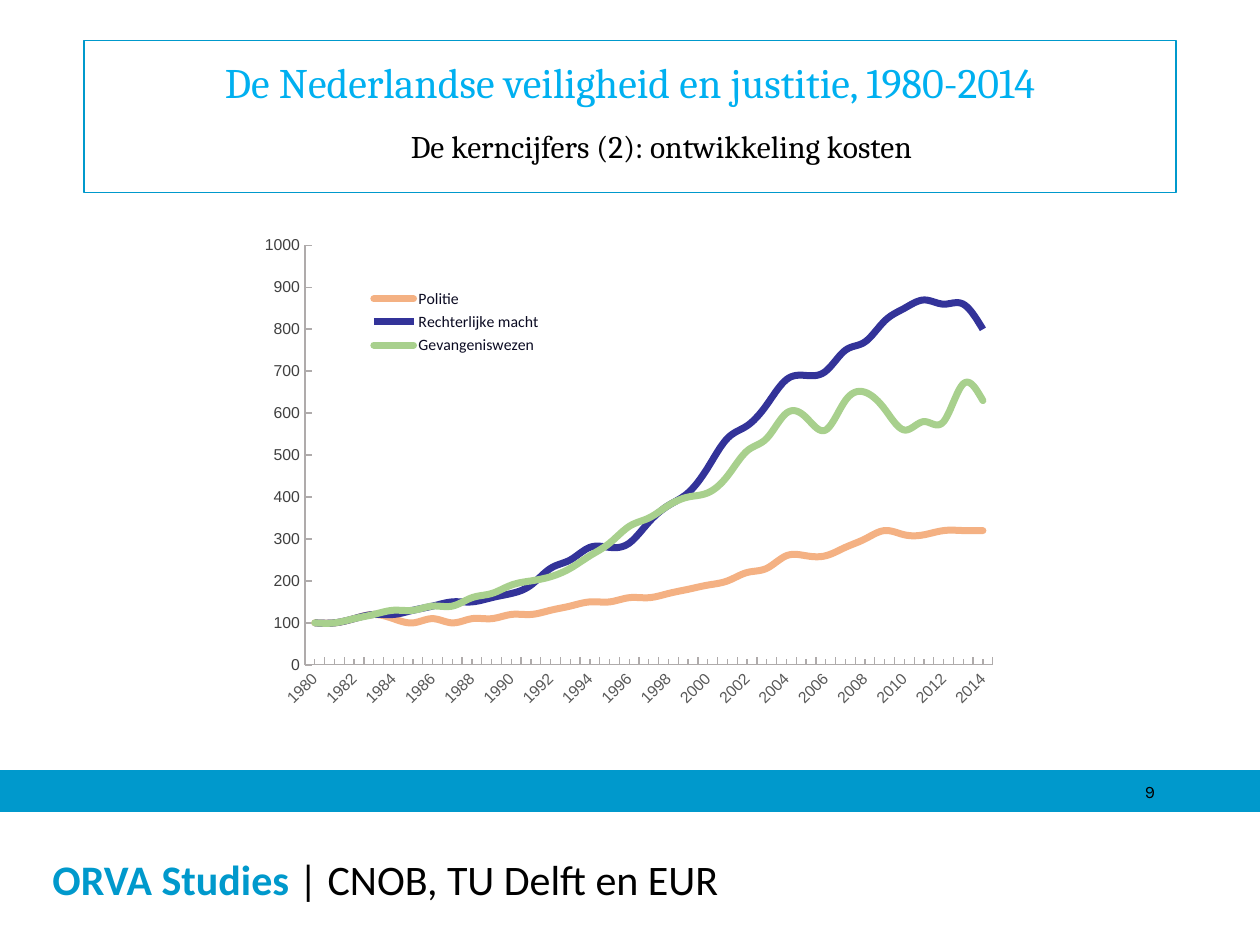
from dataclasses import dataclass

from lxml import etree
from pptx import Presentation
from pptx.chart.data import CategoryChartData
from pptx.dml.color import RGBColor
from pptx.enum import chart as ch, shapes, text
from pptx.oxml import parse_xml
from pptx.oxml.ns import nsdecls, qn
from pptx.util import Pt


@dataclass(frozen=True)
class Theme:
    blue: str = "0099CC"
    sky: str = "00B0F0"
    black: str = "000000"
    white: str = "FFFFFF"
    axis: str = "AFABAB"
    years: str = "595959"
    values: str = "404040"
    legend: str = "0B0B22"
    heading: str = "Cambria"
    body: str = "Calibri"
    number: str = "Karla"
    labels: str = "Arial"
    title_size: float = 24
    subtitle_size: float = 18
    base_size: float = 10
    label_size: float = 9


@dataclass(frozen=True)
class Box:
    left: float
    top: float
    width: float
    height: float

    def lengths(self) -> tuple:
        return Pt(self.left), Pt(self.top), Pt(self.width), Pt(self.height)


@dataclass(frozen=True)
class Band:
    box: Box
    color: str
    outlined: bool = True


@dataclass(frozen=True)
class Trend:
    name: str
    color: str
    values: tuple
    rounded: bool = True


THEME = Theme()
BANDS = (
    Band(Box(0, 458, 720, 22), THEME.blue),
    Band(Box(0, 464, 720, 76), THEME.white, False),
    Band(Box(0, 440.64, 720, 22.5), THEME.blue),
)
TRENDS = (
    Trend("Politie", "F4B183", (
        100, 100, 110, 120, 110, 100, 110, 100, 110, 110, 120, 120, 130, 140, 150, 150, 160, 160,
        170, 180, 190, 200, 220, 230, 260, 260, 260, 280, 300, 320, 310, 310, 320, 320, 320)),
    Trend("Rechterlijke macht", "333399", (
        100, 100, 110, 120, 120, 130, 140, 150, 150, 160, 170, 190, 230, 250, 280, 280, 290, 340,
        380, 410, 470, 540, 570, 620, 680, 690, 700, 750, 770, 820, 850, 870, 860, 860, 800), False),
    Trend("Gevangeniswezen", "A8D08D", (
        100, 100, 110, 120, 130, 130, 140, 140, 160, 170, 190, 200, 210, 230, 260, 290, 330, 350,
        380, 400, 410, 450, 510, 540, 600, 590, 560, 630, 650, 610, 560, 580, 580, 670, 630)),
)


def rgb(color: str) -> RGBColor:
    return RGBColor.from_string(color)


def style_font(font, name: str, size: float, color: str, bold: bool = False) -> None:
    font.name = name
    font.size = Pt(size)
    font.bold = bold
    font.color.rgb = rgb(color)


def style_line(line, color: str, width: float) -> None:
    line.color.rgb = rgb(color)
    line.width = Pt(width)


def add_run(p, words: str, name: str, size: float, color: str, bold: bool = False) -> None:
    r = p.add_run()
    r.text = words
    style_font(r.font, name, size, color, bold)


def set_frame(tf, left: float, top: float, anchor) -> None:
    tf.word_wrap = True
    tf.auto_size = text.MSO_AUTO_SIZE.NONE
    tf.margin_left, tf.margin_right = Pt(left), Pt(0)
    tf.margin_top = tf.margin_bottom = Pt(top)
    tf.vertical_anchor = anchor


def add_band(slide, band: Band):
    sp = slide.shapes.add_shape(shapes.MSO_SHAPE.RECTANGLE, *band.box.lengths())
    sp.shadow.inherit = False
    sp.fill.solid()
    sp.fill.fore_color.rgb = rgb(band.color)
    if band.outlined:
        style_line(sp.line, band.color, 0.75)
    else:
        sp.line.fill.background()
    return sp


def add_title(slide, box: Box) -> None:
    sp = slide.shapes.title
    sp.left, sp.top, sp.width, sp.height = box.lengths()
    style_line(sp.line, THEME.blue, 0.75)
    tf = sp.text_frame
    set_frame(tf, 0, 9, text.MSO_ANCHOR.TOP)
    p = tf.paragraphs[0]
    p.alignment = text.PP_ALIGN.CENTER
    p.space_after = Pt(12)
    add_run(p, "De Nederlandse veiligheid en justitie, 1980-2014",
            THEME.heading, THEME.title_size, THEME.sky)
    p = tf.add_paragraph()
    p.alignment = text.PP_ALIGN.CENTER
    p._p.get_or_add_pPr().set("marL", str(Pt(36)))
    add_run(p, "De kerncijfers (2): ontwikkeling kosten",
            THEME.heading, THEME.subtitle_size, THEME.black)


def add_footer(sp) -> None:
    tf = sp.text_frame
    set_frame(tf, 30, 4, text.MSO_ANCHOR.MIDDLE)
    p = tf.paragraphs[0]
    p.alignment = text.PP_ALIGN.LEFT
    add_run(p, "ORVA Studies ", THEME.body, THEME.title_size, THEME.blue, True)
    add_run(p, "| CNOB, TU Delft en EUR", THEME.body, THEME.title_size, THEME.black)


def add_number(slide, box: Box) -> None:
    tf = slide.shapes.add_textbox(*box.lengths()).text_frame
    set_frame(tf, 0, 3.6, text.MSO_ANCHOR.TOP)
    p = tf.paragraphs[0]
    p.alignment = text.PP_ALIGN.RIGHT
    add_run(p, "9", THEME.number, THEME.base_size, THEME.black)


def place(parent, index: int, x: float, y: float, w: float, h: float, inner: bool = False) -> None:
    for old in parent.findall(qn("c:layout")):
        parent.remove(old)
    target = '<c:layoutTarget val="inner"/>' if inner else ""
    parent.insert(index, parse_xml(
        f'<c:layout {nsdecls("c")}><c:manualLayout>{target}'
        '<c:xMode val="edge"/><c:yMode val="edge"/>'
        f'<c:x val="{x}"/><c:y val="{y}"/><c:w val="{w}"/><c:h val="{h}"/>'
        '</c:manualLayout></c:layout>'))


def style_axis(axis, color: str, width: float) -> None:
    axis.has_major_gridlines = False
    axis.major_tick_mark = ch.XL_TICK_MARK.INSIDE
    style_line(axis.format.line, THEME.axis, width)
    style_font(axis.tick_labels.font, THEME.labels, THEME.label_size, color)


def add_cost_chart(slide, box: Box) -> None:
    data = CategoryChartData()
    data.categories = [str(year) for year in range(1980, 2015)]
    for trend in TRENDS:
        data.add_series(trend.name, trend.values)
    chart = slide.shapes.add_chart(ch.XL_CHART_TYPE.LINE, *box.lengths(), data).chart
    chart.has_title = False
    style_font(chart.font, THEME.number, THEME.base_size, THEME.black)
    chart.plots[0].vary_by_categories = False
    for series, trend in zip(chart.plots[0].series, TRENDS):
        series.smooth = True
        series.marker.style = ch.XL_MARKER_STYLE.NONE
        style_line(series.format.line, trend.color, 4)
        if trend.rounded:
            series.format.line._get_or_add_ln().set("cap", "rnd")

    years, costs = chart.category_axis, chart.value_axis
    style_axis(years, THEME.years, 0.75)
    years.minor_tick_mark = ch.XL_TICK_MARK.INSIDE
    years._element.txPr.find(qn("a:bodyPr")).set("rot", "-2700000")
    skip = etree.Element(qn("c:tickLblSkip"), val="2")
    years._element.find(qn("c:noMultiLvlLbl")).addprevious(skip)
    style_axis(costs, THEME.values, 1)
    costs.minimum_scale, costs.maximum_scale, costs.major_unit = 0, 1000, 100

    chart.has_legend = True
    chart.legend.position = ch.XL_LEGEND_POSITION.RIGHT
    chart.legend.include_in_layout = True
    style_font(chart.legend.font, THEME.body, THEME.label_size, THEME.legend)
    place(chart.legend._element, 1, 0.14, 0.12, 0.26, 0.15)
    place(chart._chartSpace.chart.plotArea, 0, 0.07, 0.04, 0.91, 0.85, True)


def main() -> None:
    prs = Presentation()
    prs.slide_width, prs.slide_height = Pt(720), Pt(540)
    slide = prs.slides.add_slide(prs.slide_layouts[5])
    bands = [add_band(slide, band) for band in BANDS]
    add_footer(bands[1])
    add_number(slide, Box(510, 443, 150, 18))
    add_cost_chart(slide, Box(144, 129, 432, 282))
    add_title(slide, Box(48, 23, 624, 87))
    prs.save("out.pptx")


if __name__ == "__main__":
    main()
